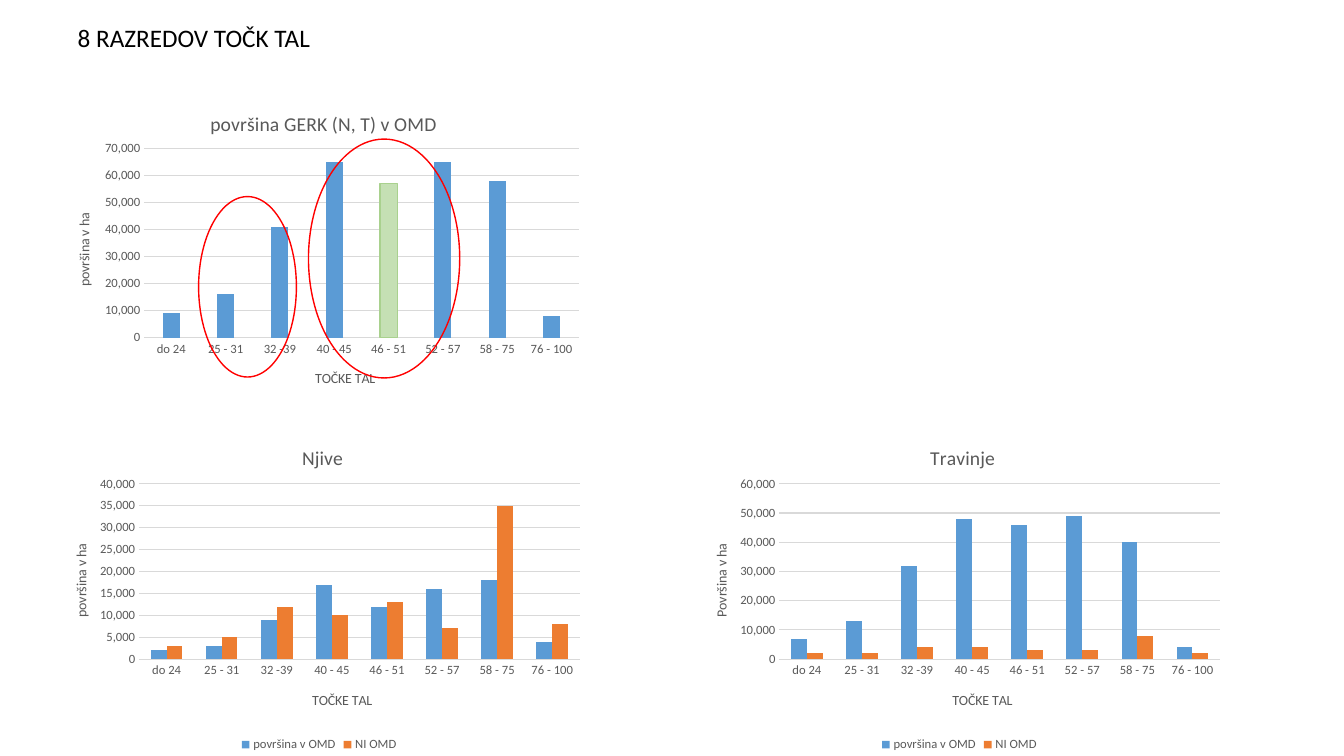
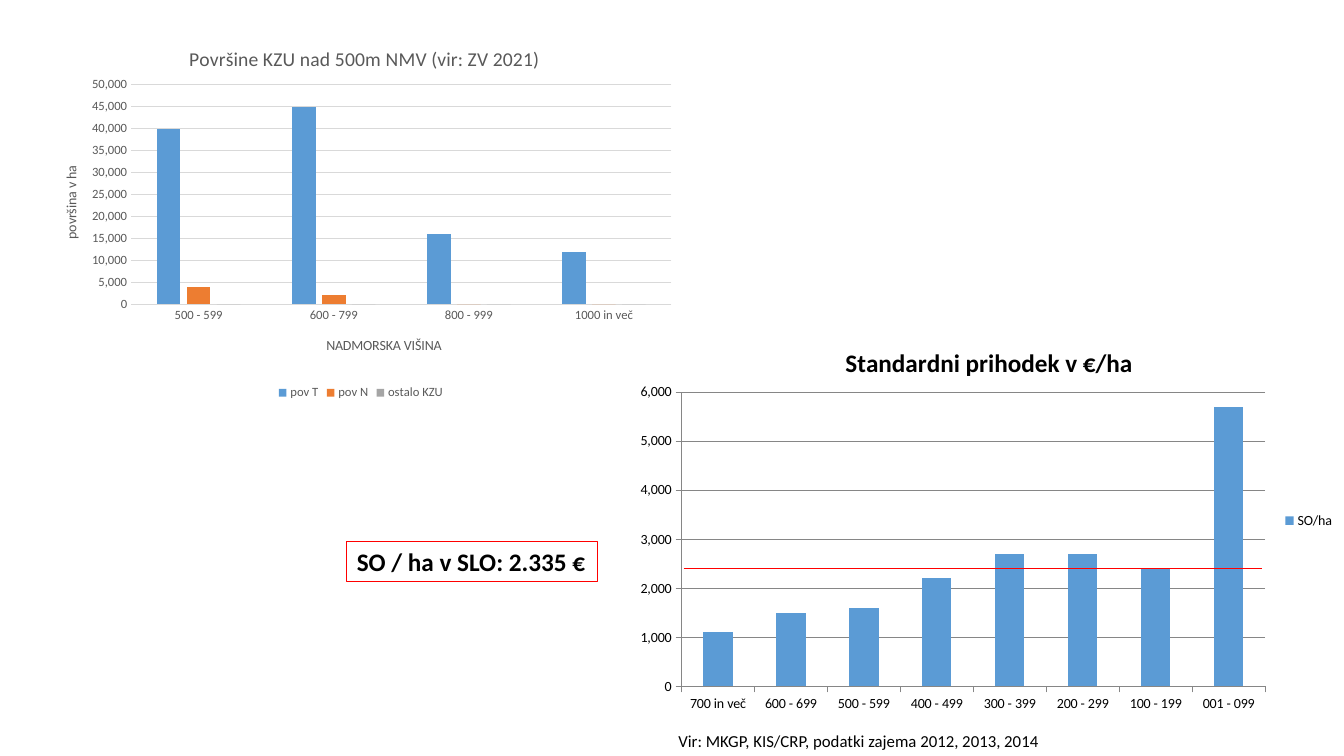
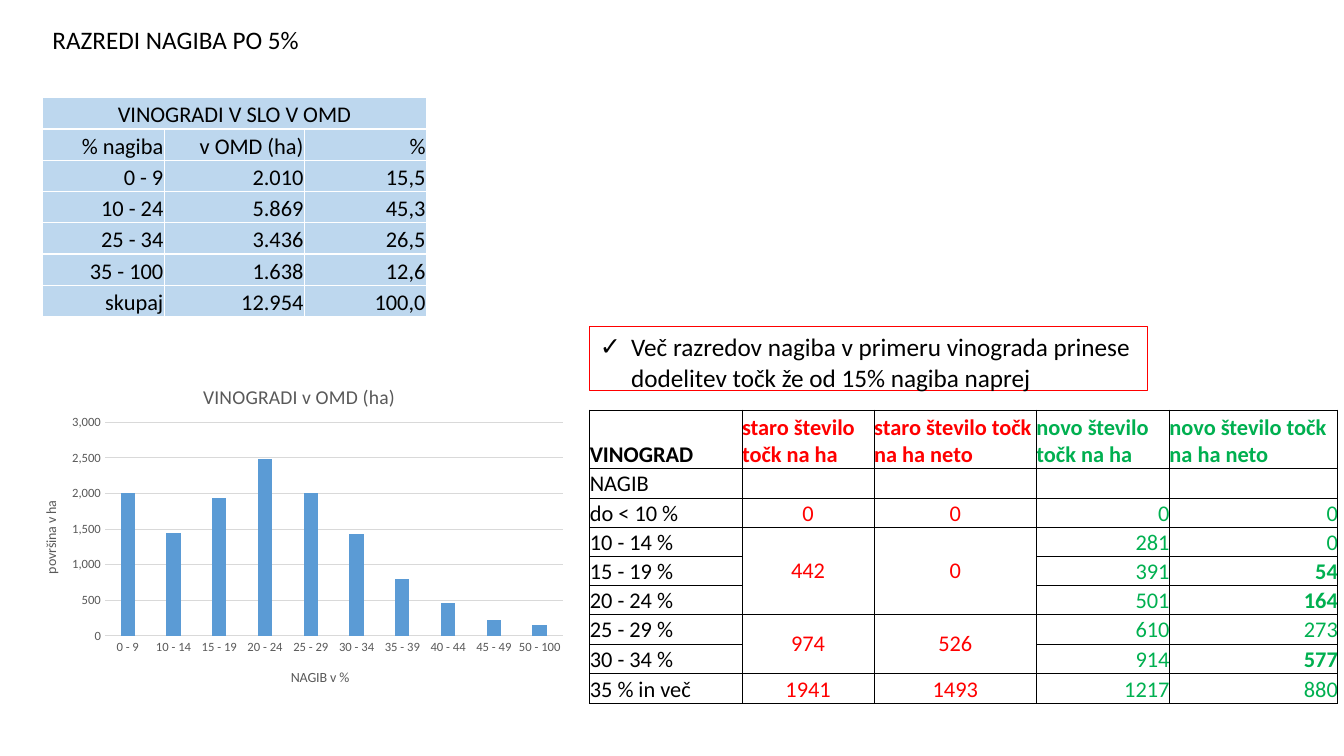
from dataclasses import dataclass

import lxml.etree
import pptx
import pptx.chart.data
import pptx.dml.color
import pptx.enum.chart
import pptx.enum.shapes
import pptx.enum.text
import pptx.oxml.ns
import pptx.util

Inches = pptx.util.Inches
Pt = pptx.util.Pt
qn = pptx.oxml.ns.qn
ALIGN = pptx.enum.text.PP_ALIGN
ANCHOR = pptx.enum.text.MSO_ANCHOR
LEGEND = pptx.enum.chart.XL_LEGEND_POSITION
TICK = pptx.enum.chart.XL_TICK_MARK


@dataclass(frozen=True)
class Theme:
    font: str = "Calibri"
    black: str = "000000"
    grey: str = "595959"
    grid: str = "D9D9D9"
    dark_grid: str = "868686"
    red: str = "FF0000"
    green: str = "00B050"
    white: str = "FFFFFF"
    table_blue: str = "BDD7EE"
    highlight: str = "C5E0B4"
    highlight_edge: str = "A9D18E"
    series: tuple = ("5B9BD5", "ED7D31", "A5A5A5")
    heading: int = 18
    table: int = 16
    chart_title: int = 14
    source: int = 12
    axis_title: int = 10
    label: int = 9


THEME = Theme()
SOIL_CLASSES = ["do 24", "25 - 31", "32 -39", "40 - 45", "46 - 51", "52 - 57", "58 - 75", "76 - 100"]


def rgb(value):
    return pptx.dml.color.RGBColor.from_string(value)


def set_font(font, size, color=THEME.black, bold=False):
    font.name = THEME.font
    font.size = Pt(size)
    font.bold = bold
    font.color.rgb = rgb(color)


def set_line(line, color, width):
    line.color.rgb = rgb(color)
    line.width = Pt(width)


def move(shape, box):
    shape.left, shape.top, shape.width, shape.height = map(Inches, box)


def write(shape, text, size, bold=False, wrap=True):
    frame = shape.text_frame
    frame.text = text
    frame.word_wrap = wrap
    frame.auto_size = pptx.enum.text.MSO_AUTO_SIZE.SHAPE_TO_FIT_TEXT
    frame.vertical_anchor = ANCHOR.TOP
    paragraph = frame.paragraphs[0]
    paragraph.alignment = ALIGN.LEFT
    set_font(paragraph.font, size, bold=bold)
    return paragraph


def add_heading(slide, box, text, wrap=True):
    heading = slide.shapes.title
    move(heading, box)
    write(heading, text, THEME.heading, wrap=wrap)


def add_outline(slide, preset, box, width):
    outline = slide.shapes.add_shape(preset, *map(Inches, box))
    outline.shadow.inherit = False
    outline.fill.background()
    set_line(outline.line, THEME.red, width)
    return outline


def add_level_line(slide, left, right, y):
    level = slide.shapes.add_connector(
        pptx.enum.shapes.MSO_CONNECTOR.STRAIGHT, Inches(left), Inches(y), Inches(right), Inches(y))
    set_line(level.line, THEME.red, 0.5)
    lxml.etree.SubElement(level._element.spPr, qn("a:effectLst"))


def add_check_note(slide, box, text):
    note = slide.placeholders[1]
    move(note, box)
    note.fill.background()
    set_line(note.line, THEME.red, 0.75)
    note.text_frame.text = text
    properties = note.text_frame.paragraphs[0]._p.get_or_add_pPr()
    properties.set("marL", str(Inches(0.31)))
    properties.set("indent", str(Inches(-0.31)))
    lxml.etree.SubElement(properties, qn("a:buChar")).set("char", "✓")
    paragraph = note.text_frame.paragraphs[0]
    paragraph.space_before = Pt(0)
    paragraph.alignment = ALIGN.LEFT
    set_font(paragraph.font, THEME.heading)
    note.text_frame.word_wrap = True
    note.text_frame.vertical_anchor = ANCHOR.TOP
    note.text_frame.auto_size = pptx.enum.text.MSO_AUTO_SIZE.SHAPE_TO_FIT_TEXT


def make_layout(chart_box, part, inner=False):
    layout = lxml.etree.Element(qn("c:layout"))
    manual = lxml.etree.SubElement(layout, qn("c:manualLayout"))
    settings = [("layoutTarget", "inner")] if inner else []
    settings += [("xMode", "edge"), ("yMode", "edge")]
    sizes = (chart_box[2], chart_box[3]) * 2
    settings += [(key, f"{length / size:.4f}") for key, length, size in zip("xywh", part, sizes)]
    for key, value in settings:
        lxml.etree.SubElement(manual, qn(f"c:{key}")).set("val", value)
    return layout


def clear_layout(element):
    for layout in element.findall(qn("c:layout")):
        element.remove(layout)


def set_chart_text(title, box, text, position, size, color, bold=False):
    title.text_frame.text = text
    set_font(title.text_frame.paragraphs[0].font, size, color, bold)
    clear_layout(title._element)
    title._element.find(qn("c:overlay")).addprevious(make_layout(box, position))


def add_column_chart(slide, box, plot_box, title, title_x, categories, series, peak, step,
                     cat_title=None, val_title=None, gap=219, overlap=-27, legend=None, plain=False):
    data = pptx.chart.data.CategoryChartData()
    data.categories = categories
    for name, values in series:
        data.add_series(name, values)
    chart = slide.shapes.add_chart(
        pptx.enum.chart.XL_CHART_TYPE.COLUMN_CLUSTERED, *map(Inches, box), data).chart

    text_color = THEME.black if plain else THEME.grey
    label_size = THEME.axis_title if plain else THEME.label
    grid_color = THEME.dark_grid if plain else THEME.grid
    set_font(chart.font, label_size, text_color)
    chart.has_title = True
    set_chart_text(chart.chart_title, box, title, (title_x, 0.18),
                   THEME.heading if plain else THEME.chart_title, text_color, plain)
    plot_area = chart._chartSpace.find(".//" + qn("c:plotArea"))
    clear_layout(plot_area)
    plot_area.insert(0, make_layout(box, plot_box, inner=True))

    plot = chart.plots[0]
    plot.vary_by_categories = False
    plot.gap_width = gap
    plot.overlap = overlap
    for column, color in zip(plot.series, THEME.series):
        column.format.fill.solid()
        column.format.fill.fore_color.rgb = rgb(color)

    values, classes = chart.value_axis, chart.category_axis
    values.minimum_scale, values.maximum_scale, values.major_unit = 0, peak, step
    values.tick_labels.number_format = "#,##0"
    values.tick_labels.number_format_is_linked = False
    values.has_major_gridlines = True
    set_line(values.major_gridlines.format.line, grid_color, 0.75)
    set_line(classes.format.line, grid_color, 0.75)
    if plain:
        set_line(values.format.line, grid_color, 0.75)
    else:
        values.format.line.fill.background()
    for axis in (values, classes):
        axis.major_tick_mark = TICK.OUTSIDE if plain else TICK.NONE
        axis.minor_tick_mark = TICK.NONE
        set_font(axis.tick_labels.font, label_size, text_color)
    if cat_title:
        text, x = cat_title
        y = plot_box[1] + plot_box[3] + 0.29
        set_chart_text(classes.axis_title, box, text, (x, y), THEME.axis_title, text_color)
    if val_title:
        text, y = val_title
        set_chart_text(values.axis_title, box, text, (0.22, y), THEME.axis_title, text_color)
        body = values.axis_title._element.find(".//" + qn("a:bodyPr"))
        body.set("rot", "-5400000")
        body.set("vert", "horz")

    chart.has_legend = legend is not None
    if legend is not None:
        chart.legend.position = legend
        chart.legend.include_in_layout = False
        set_font(chart.legend.font, label_size, text_color)
    return chart


def set_borders(cell, color, widths):
    properties = cell._tc.get_or_add_tcPr()
    for index, (side, width) in enumerate(zip("LRTB", widths)):
        border = lxml.etree.Element(qn(f"a:ln{side}"))
        border.set("w", str(Pt(width)))
        fill = lxml.etree.SubElement(border, qn("a:solidFill"))
        lxml.etree.SubElement(fill, qn("a:srgbClr")).set("val", color)
        properties.insert(index, border)


def add_grid(slide, left, top, widths, heights):
    table = slide.shapes.add_table(len(heights), len(widths), Inches(left), Inches(top),
                                   Inches(sum(widths)), Inches(sum(heights))).table
    table.first_row = table.horz_banding = False
    for column, width in zip(table.columns, widths):
        column.width = Inches(width)
    for row, height in zip(table.rows, heights):
        row.height = Inches(height)
    return table


def fill_cell(cell, text, align, anchor=ANCHOR.BOTTOM, color=THEME.black, bold=False, margin=0):
    cell.margin_left = cell.margin_right = cell.margin_top = Inches(margin)
    cell.margin_bottom = 0
    cell.vertical_anchor = anchor
    cell.text = text
    paragraph = cell.text_frame.paragraphs[0]
    paragraph.alignment = align
    set_font(paragraph.font, THEME.table, color, bold)


def add_area_table(slide, left, top):
    rows = [
        ("VINOGRADI V SLO V OMD", "", ""),
        ("% nagiba", "v OMD (ha)", "%"),
        ("0 - 9", "2.010", "15,5"),
        ("10 - 24", "5.869", "45,3"),
        ("25 - 34", "3.436", "26,5"),
        ("35 - 100", "1.638", "12,6"),
        ("skupaj", "12.954", "100,0"),
    ]
    table = add_grid(slide, left, top, (1.21, 1.39, 1.21), [0.31] * len(rows))
    table.cell(0, 0).merge(table.cell(0, 2))
    for r, row in enumerate(rows):
        for c, text in enumerate(row):
            cell = table.cell(r, c)
            fill_cell(cell, text, ALIGN.RIGHT if r else ALIGN.CENTER, margin=0.01)
            set_borders(cell, THEME.white, [1] * 4)
            cell.fill.solid()
            cell.fill.fore_color.rgb = rgb(THEME.table_blue)


def add_points_table(slide, left, top):
    rows = [
        ("VINOGRAD", "staro število točk na ha", "staro število točk na ha neto",
         "novo število točk na ha", "novo število točk na ha neto"),
        ("NAGIB", "", "", "", ""),
        ("do < 10 %", "0", "0", "0", "0"),
        ("10 - 14 %", "442", "0", "281", "0"),
        ("15 - 19 %", "", "", "391", "54"),
        ("20 - 24 %", "", "", "501", "164"),
        ("25 - 29 %", "974", "526", "610", "273"),
        ("30 - 34 %", "", "", "914", "577"),
        ("35 % in več", "1941", "1493", "1217", "880"),
    ]
    colors = (THEME.black, THEME.red, THEME.red, THEME.green, THEME.green)
    aligns = (ALIGN.LEFT, ALIGN.CENTER, ALIGN.CENTER, ALIGN.RIGHT, ALIGN.RIGHT)
    gains = {"54", "164", "577"}
    spans = {3: 5, 6: 7}
    last_row, last_column = len(rows) - 1, len(colors) - 1
    table = add_grid(slide, left, top, (1.51, 1.31, 1.61, 1.32, 1.67), [0.58] + [0.29] * 7 + [0.3])
    for first, last in spans.items():
        for c in (1, 2):
            table.cell(first, c).merge(table.cell(last, c))
    for r, row in enumerate(rows):
        for c, text in enumerate(row):
            cell = table.cell(r, c)
            spanned = r in spans and c in (1, 2)
            fill_cell(cell, text, aligns[c] if r else ALIGN.LEFT,
                      ANCHOR.MIDDLE if spanned else ANCHOR.BOTTOM,
                      colors[c], r == 0 or text in gains)
            outer = (c == 0, c == last_column, r == 0, r == last_row)
            set_borders(cell, THEME.black, [1 if edge else 0.5 for edge in outer])
            cell.fill.background()


def build_soil_slide(deck):
    slide = deck.slides.add_slide(deck.slide_layouts[5])
    add_heading(slide, (0.67, 0.17, 5.74, 0.4), "8 RAZREDOV TOČK TAL")
    total = add_column_chart(
        slide, (0.5, 0.88, 5.36, 3.13), (0.93, 0.59, 4.31, 1.88),
        "površina GERK (N, T) v OMD", 1.55, SOIL_CLASSES,
        [("Series 1", (9000, 16000, 41000, 65000, 57000, 65000, 58000, 8000))], 70000, 10000,
        ("TOČKE TAL", 2.6), ("površina v ha", 1.21))
    middle_class = total.plots[0].series[0].points[4].format
    middle_class.fill.solid()
    middle_class.fill.fore_color.rgb = rgb(THEME.highlight)
    set_line(middle_class.line, THEME.highlight_edge, 0.75)
    for box in ((1.97, 1.95, 0.97, 1.79), (3.06, 1.38, 1.5, 2.37)):
        add_outline(slide, pptx.enum.shapes.MSO_SHAPE.OVAL, box, 1)

    land_uses = [
        (0.47, "Njive", 2.49, "površina v ha", 40000, 5000,
         (2000, 3000, 9000, 17000, 12000, 16000, 18000, 4000),
         (3000, 5000, 12000, 10000, 13000, 7000, 35000, 8000)),
        (6.82, "Travinje", 2.37, "Površina v ha", 60000, 10000,
         (7000, 13000, 32000, 48000, 46000, 49000, 40000, 4000),
         (2000, 2000, 4000, 4000, 3000, 3000, 8000, 2000)),
    ]
    for left, title, title_x, unit, peak, step, inside, outside in land_uses:
        add_column_chart(
            slide, (left, 4.19, 5.39, 3.31), (0.91, 0.61, 4.37, 1.74), title, title_x, SOIL_CLASSES,
            [("površina v OMD", inside), ("NI OMD", outside)], peak, step,
            ("TOČKE TAL", 2.6), (unit, 1.18), gap=150, overlap=0, legend=LEGEND.BOTTOM)


def build_altitude_slide(deck):
    slide = deck.slides.add_slide(deck.slide_layouts[6])
    add_column_chart(
        slide, (0.37, 0.23, 6.42, 3.78), (0.93, 0.61, 5.36, 2.18),
        "Površine KZU nad 500m NMV (vir: ZV 2021)", 1.47,
        ["500 - 599", "600 - 799", "800 - 999", "1000 in več"],
        [("pov T", (40000, 45000, 16000, 12000)), ("pov N", (4000, 2000, 0, 0)),
         ("ostalo KZU", (0, 0, 0, 0))], 50000, 5000,
        ("NADMORSKA VIŠINA", 2.84), ("površina v ha", 1.39), legend=LEGEND.BOTTOM)
    add_column_chart(
        slide, (6.21, 3.2, 7.13, 3.93), (0.55, 0.69, 5.79, 2.92),
        "Standardni prihodek v €/ha", 2.13,
        ["700 in več", "600 - 699", "500 - 599", "400 - 499",
         "300 - 399", "200 - 299", "100 - 199", "001 - 099"],
        [("SO/ha", (1100, 1500, 1600, 2200, 2700, 2700, 2400, 5700))], 6000, 1000,
        gap=150, overlap=0, legend=LEGEND.RIGHT, plain=True)
    source = slide.shapes.add_textbox(*map(Inches, (6.63, 7.2, 3.83, 0.3)))
    write(source, "Vir: MKGP, KIS/CRP, podatki zajema 2012, 2013, 2014", THEME.source, wrap=False)
    average = add_outline(slide, pptx.enum.shapes.MSO_SHAPE.RECTANGLE, (3.44, 5.37, 2.49, 0.4), 0.75)
    write(average, "SO / ha v SLO: 2.335 €", THEME.heading, bold=True)
    add_level_line(slide, 6.78, 12.52, 5.64)


def build_vineyard_slide(deck):
    slide = deck.slides.add_slide(deck.slide_layouts[1])
    add_heading(slide, (0.42, 0.19, 2.67, 0.4), "RAZREDI NAGIBA PO 5%", wrap=False)
    add_column_chart(
        slide, (0.17, 3.59, 5.52, 3.4), (0.87, 0.6, 4.54, 2.12), "VINOGRADI v OMD (ha)", 1.81,
        ["0 - 9", "10 - 14", "15 - 19", "20 - 24", "25 - 29",
         "30 - 34", "35 - 39", "40 - 44", "45 - 49", "50 - 100"],
        [("Series 1", (2010, 1450, 1940, 2480, 2010, 1430, 800, 460, 220, 150))], 3000, 500,
        ("NAGIB v %", 2.69), ("površina v ha", 1.35))
    add_area_table(slide, 0.42, 0.97)
    add_points_table(slide, 5.85, 4.07)
    add_check_note(slide, (5.85, 3.24, 5.53, 0.71),
                   "Več razredov nagiba v primeru vinograda prinese dodelitev točk že od 15% nagiba naprej")


def main():
    deck = pptx.Presentation()
    deck.slide_width, deck.slide_height = Inches(13.33), Inches(7.5)
    build_soil_slide(deck)
    build_altitude_slide(deck)
    build_vineyard_slide(deck)
    deck.save("out.pptx")


if __name__ == "__main__":
    main()
